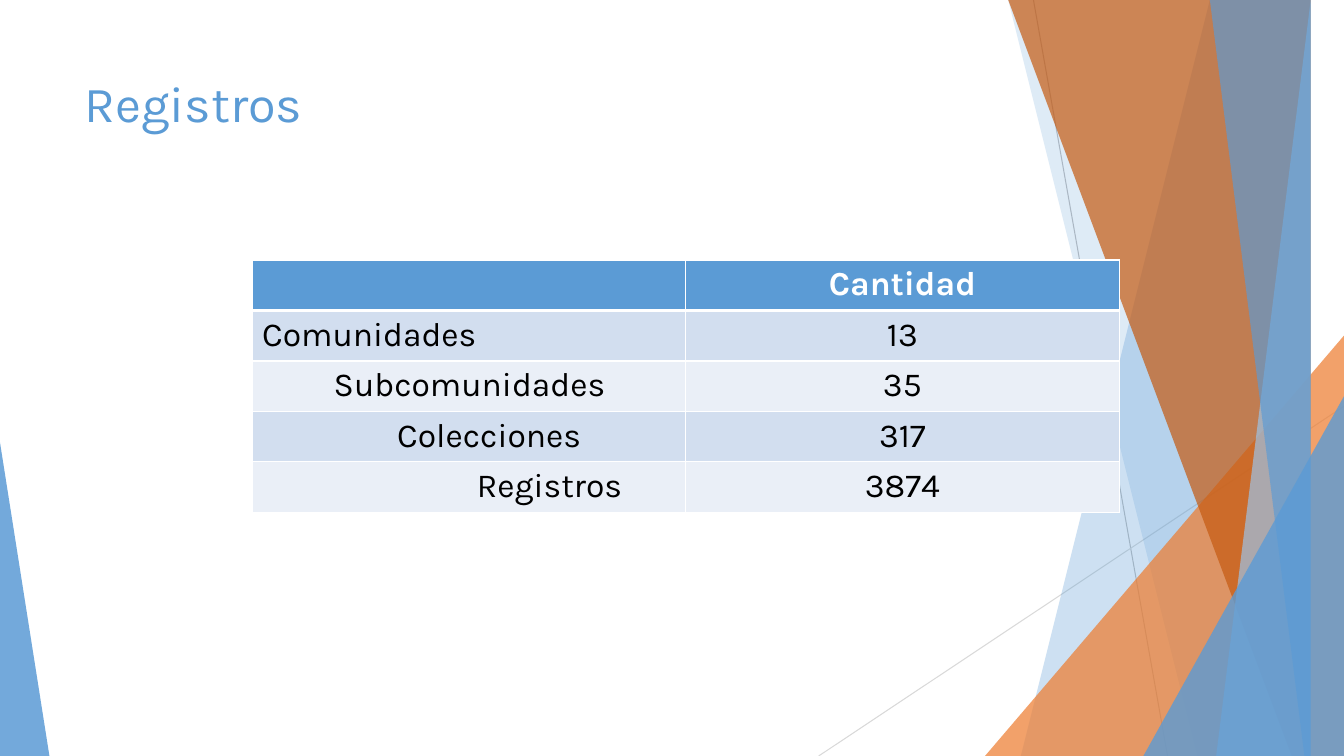
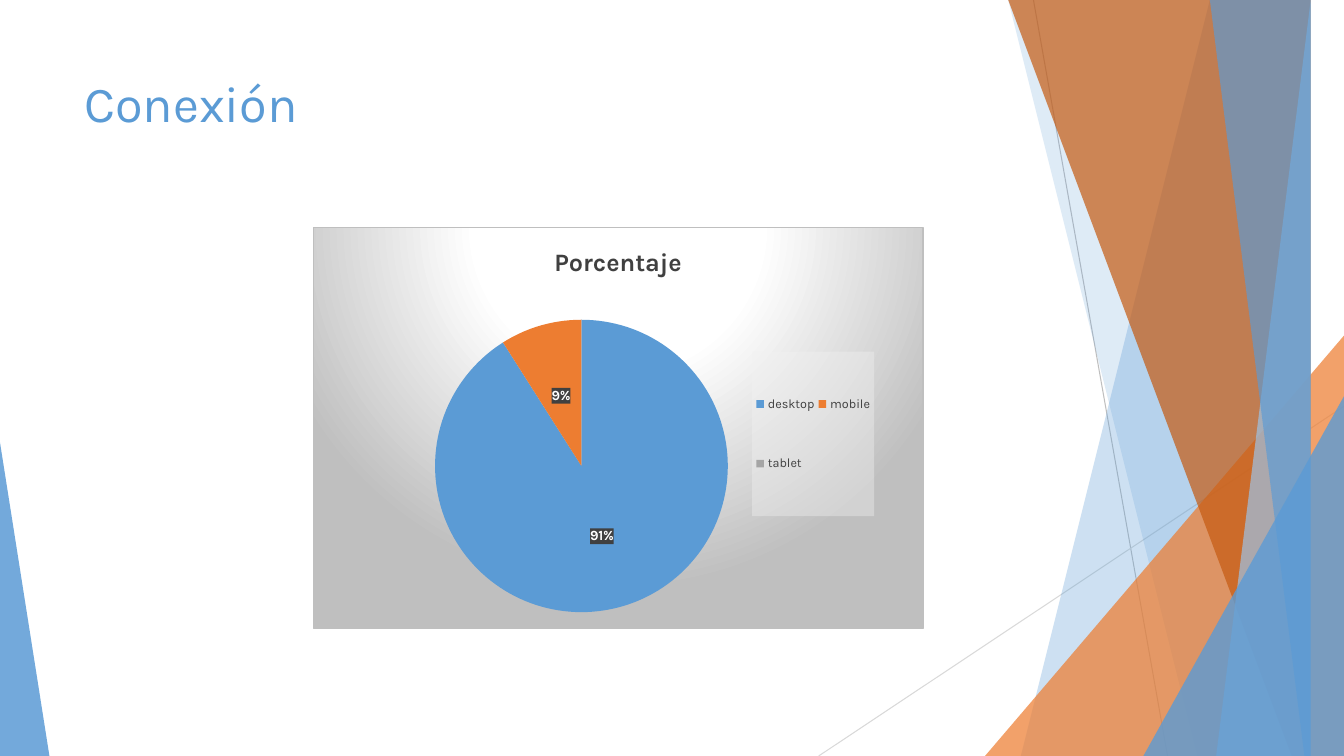
from copy import deepcopy

from lxml import etree
from pptx import Presentation
from pptx.chart.data import CategoryChartData
from pptx.dml.color import RGBColor
from pptx.enum.chart import XL_CHART_TYPE, XL_LABEL_POSITION, XL_LEGEND_POSITION
from pptx.enum.shapes import MSO_CONNECTOR, MSO_SHAPE
from pptx.enum.text import PP_ALIGN
from pptx.oxml import parse_xml
from pptx.oxml.ns import nsdecls, qn
from pptx.util import Inches, Pt

WIDTH, HEIGHT = 13.33, 7.5
FONT = "Karla"
BLUE, SKY, ORANGE, RUST = "5B9BD5", "9DC3E6", "ED7D31", "C55A11"
GREY, SILVER, DARK, WHITE, BLACK = "A5A5A5", "BFBFBF", "404040", "FFFFFF", "000000"
BANDS = "D2DEEF", "EAEFF7"


def rgb(code):
    return RGBColor.from_string(code)


def style(font, size, color, bold=False):
    font.name, font.size, font.bold = FONT, Pt(size), bold
    font.color.rgb = rgb(color)


def write(frame, text, size, color, bold=False, align=PP_ALIGN.LEFT):
    para = frame.paragraphs[0]
    para.alignment = align
    run = para.add_run()
    run.text = text
    style(run.font, size, color, bold)


# Background of every slide

def paint(shape, color, alpha):
    shape.shadow.inherit = False
    shape.line.fill.background()
    shape.fill.solid()
    shape.fill.fore_color.rgb = rgb(color)
    tone = shape._element.spPr.find(".//" + qn("a:srgbClr"))
    etree.SubElement(tone, qn("a:alpha")).set("val", str(alpha * 1000))


def blade(slide, top, foot, color, alpha):
    """Fill from a slanted left edge to the right side of the slide."""
    pen = slide.shapes.build_freeform(top, 0, scale=Inches(1))
    pen.add_line_segments([(WIDTH, 0), (WIDTH, HEIGHT), (foot, HEIGHT)], close=True)
    paint(pen.convert_to_shape(), color, alpha)


def wedge(slide, left, top, width, tip, color, alpha):
    """Stand a triangle on the bottom edge; tip runs from 0 (left) to 1 (right)."""
    shape = slide.shapes.add_shape(
        MSO_SHAPE.ISOSCELES_TRIANGLE, Inches(left), Inches(top),
        Inches(width), Inches(HEIGHT - top))
    shape.adjustments[0] = tip
    paint(shape, color, alpha)


def ray(slide, start, end, color):
    line = slide.shapes.add_connector(
        MSO_CONNECTOR.STRAIGHT, *[Inches(n) for n in (*start, *end)])
    line.line.color.rgb = rgb(color)
    line.line.width = Pt(0.75)
    etree.SubElement(line._element.spPr, qn("a:effectLst"))


def backdrop(slide):
    ray(slide, (10.25, 0), (11.58, HEIGHT), SILVER)
    ray(slide, (WIDTH, 4.03), (8.12, HEIGHT), "D9D9D9")
    blade(slide, 12.28, 10.04, BLUE, 30)
    blade(slide, 10.5, 11.83, BLUE, 20)
    wedge(slide, 9.77, 3.33, 3.56, 1, ORANGE, 72)
    blade(slide, 10.21, 12.91, RUST, 70)
    blade(slide, 13.03, 11.92, SKY, 70)
    blade(slide, 11.96, 13.18, BLUE, 65)
    wedge(slide, 11.34, 3.93, 1.99, 1, BLUE, 80)
    wedge(slide, 0, 4.39, 0.49, 0, BLUE, 85)


def page(deck, title):
    slide = deck.slides.add_slide(deck.slide_layouts[6])
    backdrop(slide)
    box = slide.shapes.add_textbox(Inches(0.74), Inches(0.67), Inches(9.4), Inches(1.44))
    box.text_frame.word_wrap = True
    write(box.text_frame, title, 36, BLUE)
    return slide


# Table

def edge(cell, base):
    """Draw white borders, with the given width below."""
    props = cell._tc.get_or_add_tcPr()
    sides = {"lnL": 1, "lnR": 1, "lnT": 1, "lnB": base}
    for spot, (side, width) in enumerate(sides.items()):
        props.insert(spot, parse_xml(
            f'<a:{side} {nsdecls("a")} w="{Pt(width)}"><a:solidFill>'
            f'<a:srgbClr val="{WHITE}"/></a:solidFill></a:{side}>'))


def grid(slide, left, top, width, row, head, items):
    """Tabulate items of (label, indent, count) under a header."""
    size = len(items) + 1
    table = slide.shapes.add_table(
        size, 2, Inches(left), Inches(top), Inches(width), Inches(row * size)).table
    for line in table.rows:
        line.height = Inches(row)
    for cell in table.iter_cells():
        cell.fill.solid()
        cell.fill.fore_color.rgb = rgb(BLUE)
    write(table.cell(0, 1).text_frame, head, 24, WHITE, True, PP_ALIGN.CENTER)
    for at, (label, indent, count) in enumerate(items, 1):
        name, value = table.cell(at, 0), table.cell(at, 1)
        name.margin_left = Inches(0.1 + indent)
        write(name.text_frame, label, 24, BLACK)
        write(value.text_frame, count, 24, BLACK, align=PP_ALIGN.CENTER)
        for cell in (name, value):
            cell.fill.fore_color.rgb = rgb(BANDS[(at - 1) % 2])
    for spot, cell in enumerate(table.iter_cells()):
        edge(cell, 3 if spot < 2 else 1)


# Chart

def layout(x, y, size=None, inner=False):
    """Give a manual layout in fractions of the chart."""
    parts = [("layoutTarget", "inner")] if inner else []
    if size:
        parts += [("xMode", "edge"), ("yMode", "edge")]
    parts += [("x", x), ("y", y)]
    if size:
        parts += zip("wh", size)
    body = "".join(f'<c:{tag} val="{val}"/>' for tag, val in parts)
    return parse_xml(f'<c:layout {nsdecls("c")}><c:manualLayout>{body}'
                     '</c:manualLayout></c:layout>')


def look(fill, line="<a:ln><a:noFill/></a:ln>"):
    return parse_xml(f'<c:spPr {nsdecls("c", "a")}>{fill}{line}</c:spPr>')


def solid(color, alpha=100):
    return (f'<a:solidFill><a:srgbClr val="{color}">'
            f'<a:alpha val="{alpha * 1000}"/></a:srgbClr></a:solidFill>')


def glow(chart):
    """Light the chart area from above."""
    stops = "".join(
        f'<a:gs pos="{pos * 1000}"><a:srgbClr val="{color}"/></a:gs>'
        for pos, color in ((0, WHITE), (39, WHITE), (100, SILVER)))
    fill = (f'<a:gradFill><a:gsLst>{stops}</a:gsLst><a:path path="circle">'
            '<a:fillToRect l="50000" t="-80000" r="50000" b="180000"/>'
            '</a:path></a:gradFill>')
    line = f'<a:ln w="{Pt(0.75)}">{solid(SILVER)}</a:ln>'
    chart.element.find(qn("c:chart")).addnext(look(fill, line))


def legend(chart):
    chart.has_legend = True
    key = chart.legend
    key.position = XL_LEGEND_POSITION.RIGHT
    key.include_in_layout = False
    style(key.font, 9, DARK)
    root = key._element
    for old in root.findall(qn("c:layout")):
        root.remove(old)
    root.find(qn("c:legendPos")).addnext(layout(0.72, 0.31, (0.2, 0.41)))
    root.find(qn("c:txPr")).addprevious(look(solid("F2F2F2", 39)))


def shares(series, moved):
    """Label slices with percentages, lifting the label at index moved."""
    labels = series.data_labels
    labels.show_percentage, labels.show_value = True, False
    labels.number_format, labels.number_format_is_linked = "0%", False
    labels.position = XL_LABEL_POSITION.CENTER
    style(labels.font, 10, WHITE, True)
    root = labels._element
    root.find(qn("c:txPr")).addprevious(look(solid(DARK)))
    own = parse_xml(f'<c:dLbl {nsdecls("c")}><c:idx val="{moved}"/></c:dLbl>')
    own.append(layout(0.01, -0.08))
    for part in root:
        if part.tag not in (qn("c:showLeaderLines"), qn("c:leaderLines")):
            own.append(deepcopy(part))
    root.insert(0, own)


def pie(slide, left, top, width, height, title, names, values, colors):
    data = CategoryChartData()
    data.categories = names
    data.add_series(title, values)
    chart = slide.shapes.add_chart(
        XL_CHART_TYPE.PIE, Inches(left), Inches(top), Inches(width),
        Inches(height), data).chart
    style(chart.font, 10, BLACK)
    chart.has_title = True
    write(chart.chart_title.text_frame, title, 18, DARK, True, PP_ALIGN.CENTER)
    chart.chart_title.include_in_layout = False
    series = chart.plots[0].series[0]
    for spot, color in enumerate(colors):
        fill = series.points[spot].format.fill
        fill.solid()
        fill.fore_color.rgb = rgb(color)
    shares(series, len(values) - 1)
    legend(chart)
    area = chart.element.find(".//" + qn("c:plotArea"))
    for old in area.findall(qn("c:layout")):
        area.remove(old)
    area.insert(0, layout(0.2, 0.23, (0.48, 0.73), inner=True))
    glow(chart)


def main():
    deck = Presentation()
    deck.slide_width, deck.slide_height = Inches(WIDTH), Inches(HEIGHT)
    grid(page(deck, "Registros"), 2.5, 2.58, 8.6, 0.49, "Cantidad", [
        ("Comunidades", 0, "13"),
        ("Subcomunidades", 0.71, "35"),
        ("Colecciones", 1.34, "317"),
        ("Registros", 2.13, "3874"),
    ])
    pie(page(deck, "Conexión"), 3.1, 2.25, 6.06, 3.99, "Porcentaje",
        ("desktop", "mobile", "tablet"), (91, 9, 0), (BLUE, ORANGE, GREY))
    deck.save("out.pptx")


if __name__ == "__main__":
    main()
